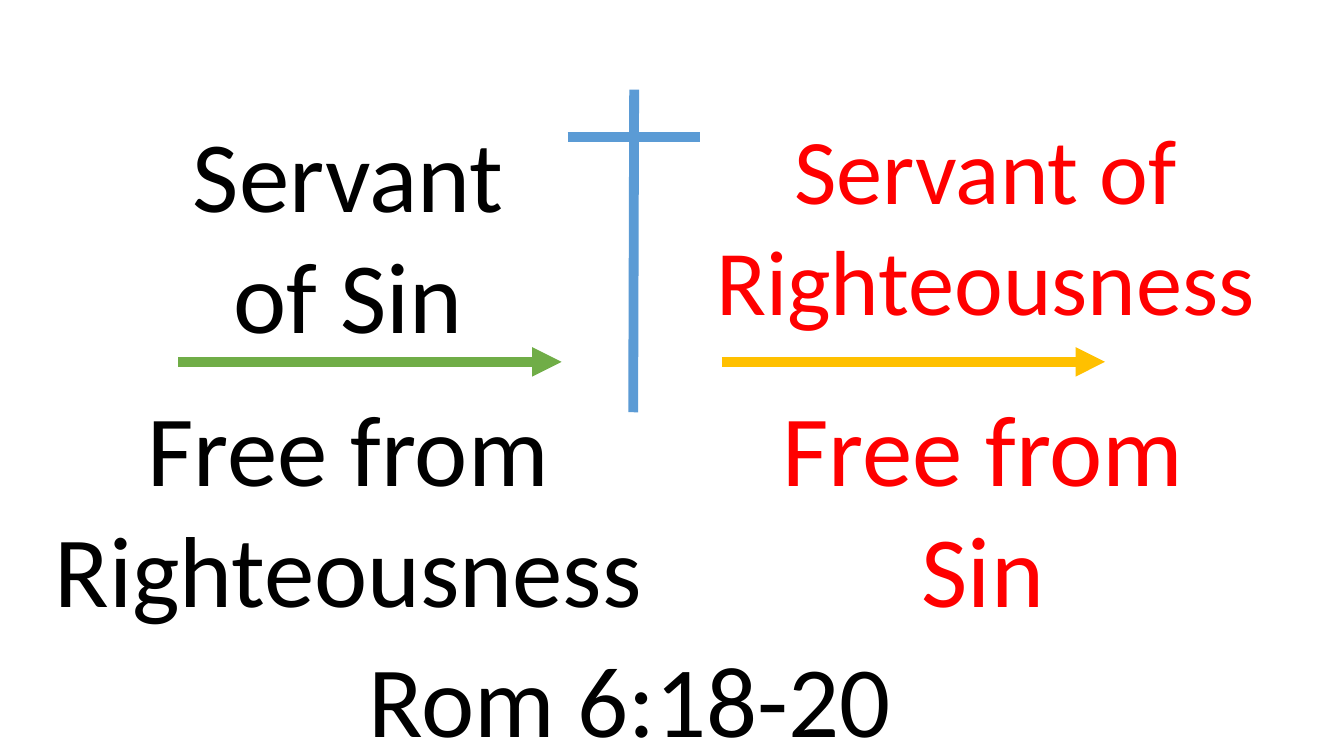
from lxml import etree
from pptx import Presentation
from pptx.dml.color import RGBColor
from pptx.enum.shapes import MSO_CONNECTOR
from pptx.enum.text import MSO_AUTO_SIZE, PP_ALIGN
from pptx.oxml.ns import qn
from pptx.util import Inches, Pt

STRAIGHT = MSO_CONNECTOR.STRAIGHT
LEFT, CENTER = PP_ALIGN.LEFT, PP_ALIGN.CENTER
FIT_SHAPE = MSO_AUTO_SIZE.SHAPE_TO_FIT_TEXT

WIDTH, HEIGHT = 13.33, 7.5
FONT = "Calibri"
BLACK, RED = "000000", "FF0000"
BLUE, GREEN, GOLD = "5B9BD5", "70AD47", "FFC000"

# Rows and columns of the layout, in inches
TOP_ROW, ARROW_ROW, LOWER_ROW, VERSE_ROW = 1.06, 3.59, 3.78, 6.27
LEFT_COL, RIGHT_COL = 1.77, 7.16
ARROW_LENGTH = 3.8


def color(hex_code):
    return RGBColor.from_string(hex_code)


def add_text(s, box, lines, size=72, fill=BLACK, aligns=(CENTER, CENTER), wrap=False):
    tf = s.shapes.add_textbox(*map(Inches, box)).text_frame
    tf.word_wrap = wrap
    tf.auto_size = FIT_SHAPE
    for i, (line, align) in enumerate(zip(lines, aligns)):
        p = tf.add_paragraph() if i else tf.paragraphs[0]
        p.alignment = align
        r = p.add_run()
        r.text = line
        r.font.name, r.font.size = FONT, Pt(size)
        r.font.color.rgb = color(fill)


def add_line(s, start, end, stroke, arrow=False):
    line = s.shapes.add_connector(STRAIGHT, *map(Inches, start + end))
    line.line.width = Pt(7)
    line.line.color.rgb = color(stroke)
    if arrow:
        ln = line.line._get_or_add_ln()
        etree.SubElement(ln, qn("a:tailEnd"), type="triangle")
    etree.SubElement(line._element.spPr, qn("a:effectLst"))


def add_cross(s):
    add_line(s, (5.63, 1.36), (6.94, 1.36), BLUE)
    add_line(s, (6.29, 0.89), (6.28, 4.09), BLUE)


def main():
    prs = Presentation()
    prs.slide_width, prs.slide_height = Inches(WIDTH), Inches(HEIGHT)
    s = prs.slides.add_slide(prs.slide_layouts[6])

    add_cross(s)
    add_text(s, (6.94, TOP_ROW, 5.67, 2.32), ["Servant of Righteousness"],
             size=66, fill=RED, wrap=True)
    add_text(s, (LEFT_COL, TOP_ROW, 3.37, 2.52), ["Servant of Sin"], wrap=True)

    for x, stroke in ((LEFT_COL, GREEN), (RIGHT_COL, GOLD)):
        add_line(s, (x, ARROW_ROW), (x + ARROW_LENGTH, ARROW_ROW), stroke, arrow=True)

    add_text(s, (3.56, VERSE_ROW, 5.44, 1.31), ["Rom 6:18-20"], aligns=(LEFT,))
    add_text(s, (0.41, LOWER_ROW, 6.09, 2.52), ["Free from", "Righteousness"])
    add_text(s, (7.66, LOWER_ROW, 4.22, 2.52), ["Free from", "Sin"],
             fill=RED, aligns=(LEFT, CENTER))

    prs.save("out.pptx")


if __name__ == "__main__":
    main()
